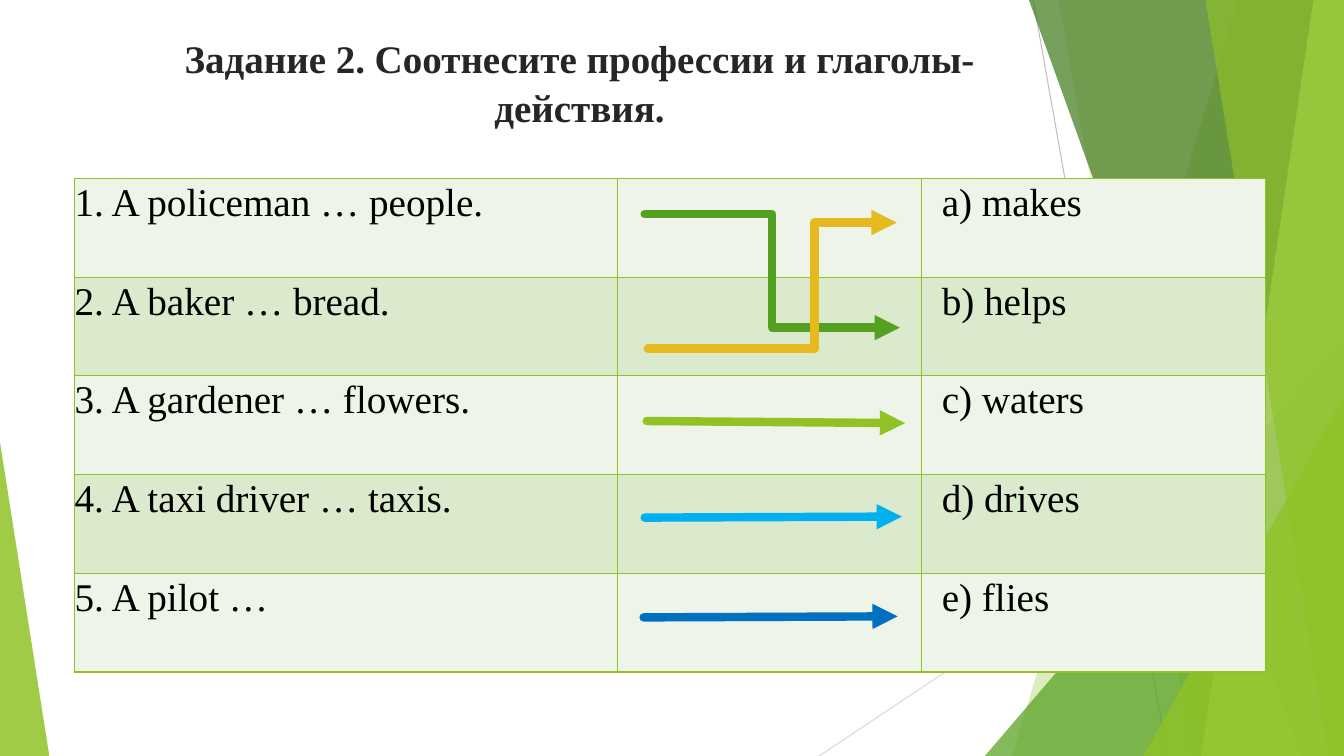
"""Builds the slide that matches professions with their action verbs."""
from pptx import Presentation
from pptx.dml.color import RGBColor
from pptx.enum.shapes import MSO_CONNECTOR, MSO_SHAPE
from pptx.enum.text import PP_ALIGN
from pptx.oxml import parse_xml
from pptx.oxml.ns import nsdecls
from pptx.util import Pt

PX = 9525
FONT = "Times New Roman"
NS = nsdecls("a")


def rgb(value):
    return RGBColor.from_string(value)


def add_line(kind, ends, color, width):
    ln = s.shapes.add_connector(kind, *(v * PX for v in ends))
    ln.line.color.rgb = rgb(color)
    ln.line.width = Pt(width)
    ln._element.spPr.append(parse_xml(f"<a:effectLst {NS}/>"))
    return ln


prs = Presentation()
prs.slide_width, prs.slide_height = 1280 * PX, 720 * PX
s = prs.slides.add_slide(prs.slide_layouts[6])

add_line(MSO_CONNECTOR.STRAIGHT, (984, 0, 1112, 720), "BFBFBF", 0.75)
add_line(MSO_CONNECTOR.STRAIGHT, (1280, 387, 780, 720), "D9D9D9", 0.75)

facets = [
    ("90C226", 30, (1179, 964)),
    ("90C226", 20, (1008, 1136)),
    ("54A021", 72, (938, 320, 342, 400, 1)),
    ("3F7819", 70, (980, 1239)),
    ("C0E474", 70, (1251, 1144)),
    ("90C226", 65, (1148, 1265)),
    ("90C226", 80, (1089, 377, 191, 343, 1)),
    ("90C226", 85, (0, 421, 47, 299, 0)),
]
for color, alpha, geometry in facets:
    if len(geometry) == 2:
        top, bottom = geometry
        fb = s.shapes.build_freeform(top, 0, scale=PX)
        fb.add_line_segments([(1280, 0), (1280, 720), (bottom, 720)])
        sp = fb.convert_to_shape()
    else:
        *box, apex = geometry
        sp = s.shapes.add_shape(MSO_SHAPE.ISOSCELES_TRIANGLE, *(v * PX for v in box))
        sp.adjustments[0] = apex
    sp.shadow.inherit = False
    sp.line.fill.background()
    sp.fill.solid()
    sp.fill.fore_color.rgb = rgb(color)
    clr = sp._element.spPr.find(".//{*}srgbClr")
    clr.append(parse_xml(f'<a:alpha {NS} val="{alpha * 1000}"/>'))

tf = s.shapes.add_textbox(101 * PX, 26 * PX, 902 * PX, 106 * PX).text_frame
tf.word_wrap = True
p = tf.paragraphs[0]
p.alignment = PP_ALIGN.CENTER
p.line_spacing = 1.05
r = p.add_run()
r.text = "Задание 2. Соотнесите профессии и глаголы-действия."
for name, value in {"name": FONT, "size": Pt(27.9), "bold": True}.items():
    setattr(r.font, name, value)
r.font.color.rgb = rgb("262626")

rows = [
    ("1. A policeman … people.", "", "a) makes"),
    ("2. A baker … bread.", "", "b) helps"),
    ("3. A gardener … flowers.", "", "c) waters"),
    ("4. A taxi driver … taxis.", "", "d) drives"),
    ("5. A pilot …", "", "e) flies"),
]
widths = (517, 290, 327)
row_height = 94
table = s.shapes.add_table(
    len(rows), len(widths), 71 * PX, 170 * PX, sum(widths) * PX, len(rows) * row_height * PX
).table
table.first_row = table.horz_banding = False
for col, width in zip(table.columns, widths):
    col.width = width * PX
for i, texts in enumerate(rows):
    table.rows[i].height = row_height * PX
    for j, text in enumerate(texts):
        cell = table.cell(i, j)
        tcPr = cell._tc.get_or_add_tcPr()
        for side in "LRTB":
            tcPr.append(parse_xml(
                f'<a:ln{side} {NS} w="12700"><a:solidFill><a:srgbClr val="90C226"/>'
                f"</a:solidFill></a:ln{side}>"
            ))
        cell.fill.solid()
        cell.fill.fore_color.rgb = rgb("DBE9CD" if i % 2 else "EEF4E8")
        cell.margin_left = 19 * PX if j == 2 else 0
        cell.margin_right = cell.margin_top = cell.margin_bottom = 0
        if text:
            p = cell.text_frame.paragraphs[0]
            p.line_spacing = 1.07
            r = p.add_run()
            r.text = text
            for name, value in {"name": FONT, "size": Pt(28), "bold": False}.items():
                setattr(r.font, name, value)
            r.font.color.rgb = rgb("000000")

arrows = [
    ((614, 204, 857, 312), "54A021", 50000),
    ((617, 332, 854, 212), "E6B91E", 67000),
    ((616, 401, 862, 403), "90C226", None),
    ((614, 493, 859, 492), "00B0F0", None),
    ((613, 588, 855, 587), "0070C0", None),
]
for ends, color, bend in arrows:
    kind = MSO_CONNECTOR.ELBOW if bend else MSO_CONNECTOR.STRAIGHT
    spPr = add_line(kind, ends, color, 6)._element.spPr
    ln = spPr.find("{*}ln")
    ln.set("cap", "rnd")
    ln.append(parse_xml(f"<a:round {NS}/>"))
    ln.append(parse_xml(f'<a:tailEnd {NS} type="triangle"/>'))
    if bend:
        spPr.find(".//{*}avLst").append(
            parse_xml(f'<a:gd {NS} name="adj1" fmla="val {bend}"/>')
        )

prs.save("out.pptx")
